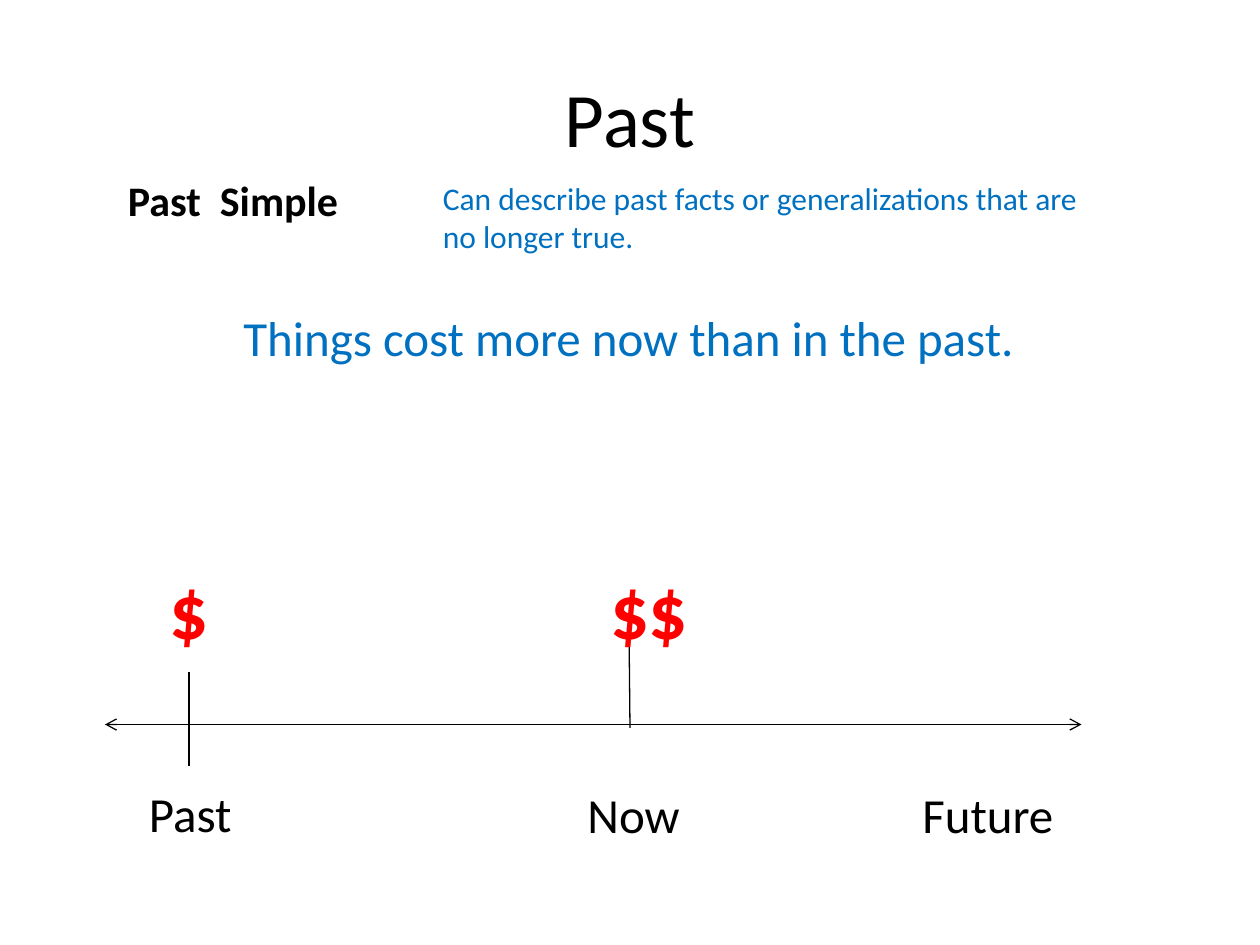
from dataclasses import dataclass

from lxml import etree
from pptx import Presentation
from pptx.dml.color import RGBColor
from pptx.enum import shapes, text
from pptx.oxml import ns
from pptx.util import Pt


@dataclass(frozen=True)
class Theme:
    font: str = "Calibri"
    black: RGBColor = RGBColor(0, 0, 0)
    blue: RGBColor = RGBColor(0x00, 0x70, 0xC0)
    red: RGBColor = RGBColor(0xFF, 0, 0)
    title: int = 44
    label: int = 28
    heading: int = 24
    note: int = 18
    line: float = 0.75


THEME = Theme()
AXIS_Y = 414


def place(sp, left, top, width, height):
    box = {"left": left, "top": top, "width": width, "height": height}
    for name, value in box.items():
        setattr(sp, name, Pt(value))


def write(tf, words, size, color, bold=False, align=text.PP_ALIGN.LEFT):
    tf.text = words  # "\v" becomes a line break
    p = tf.paragraphs[0]
    p.alignment = align
    for r in p.runs:
        for name, value in {"name": THEME.font, "size": Pt(size), "bold": bold}.items():
            setattr(r.font, name, value)
        r.font.color.rgb = color


def add_title(s, words):
    sp = s.shapes.title
    place(sp, 36, 21.6, 648, 90)
    sp.text_frame.vertical_anchor = text.MSO_ANCHOR.MIDDLE
    write(sp.text_frame, words, THEME.title, THEME.black, align=text.PP_ALIGN.CENTER)


def add_text(s, box, words, size, color, wrap=False, **style):
    tf = s.shapes.add_textbox(*map(Pt, box)).text_frame
    tf.word_wrap = wrap
    write(tf, words, size, color, **style)


def add_line(s, x1, y1, x2, y2, arrow=False):
    line = s.shapes.add_connector(
        shapes.MSO_CONNECTOR.STRAIGHT, Pt(x1), Pt(y1), Pt(x2), Pt(y2))
    line.line.color.rgb = THEME.black
    line.line.width = Pt(THEME.line)
    if arrow:
        ln = line.line._get_or_add_ln()
        etree.SubElement(ln, ns.qn("a:tailEnd"), type="arrow")
    etree.SubElement(line._element.spPr, ns.qn("a:effectLst"))


def main():
    prs = Presentation()
    prs.slide_width, prs.slide_height = Pt(720), Pt(540)
    s = prs.slides.add_slide(prs.slide_layouts[5])
    t = THEME
    add_title(s, "Past")

    # Timeline: an arrow each way from the middle, with its labels
    for end_x in (60, 618):
        add_line(s, 348, AXIS_Y, end_x, AXIS_Y, arrow=True)
    add_text(s, (78, 444, 68, 41), "Past", t.label, t.black, wrap=True)
    add_text(s, (328, 445, 68, 41), "Now", t.label, t.black, wrap=True,
             align=text.PP_ALIGN.CENTER)
    add_text(s, (520, 445, 122, 41), "Future", t.label, t.black, wrap=True)

    # Tense and its use
    add_text(s, (66, 96, 136, 36), "Past  Simple", t.heading, t.black, bold=True)
    add_text(s, (246, 99, 382, 51),
             "Can describe past facts or generalizations that are\vno longer true.",
             t.note, t.blue)
    add_text(s, (132, 172, 460, 41), "Things cost more now than in the past.",
             t.label, t.blue)

    # Moments on the timeline and their prices
    add_line(s, 108, 384, 108, 438)
    add_line(s, 359.5, 365, 360, 416)
    add_text(s, (90, 318, 37, 60.5), "$", t.title, t.red, bold=True)
    add_text(s, (341.5, 318, 60, 114), "$$", t.title, t.red, bold=True)

    prs.save("out.pptx")


if __name__ == "__main__":
    main()
